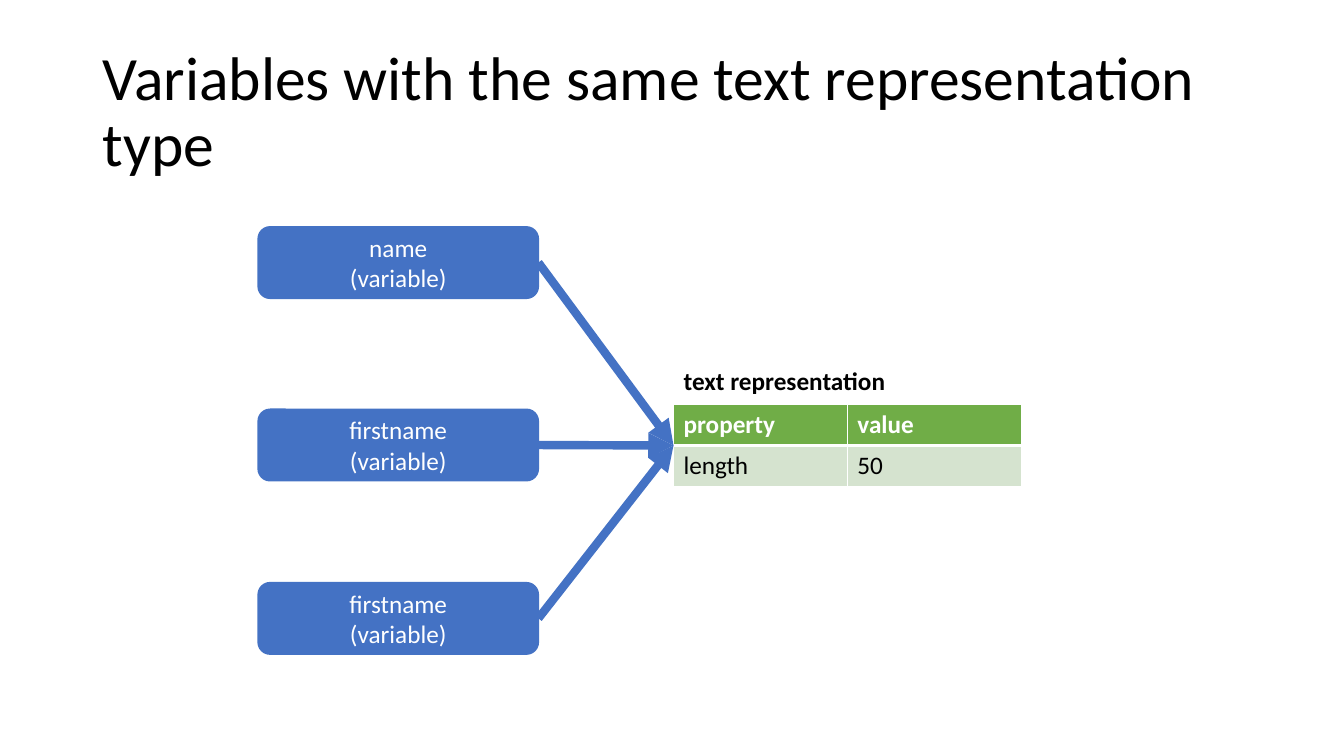
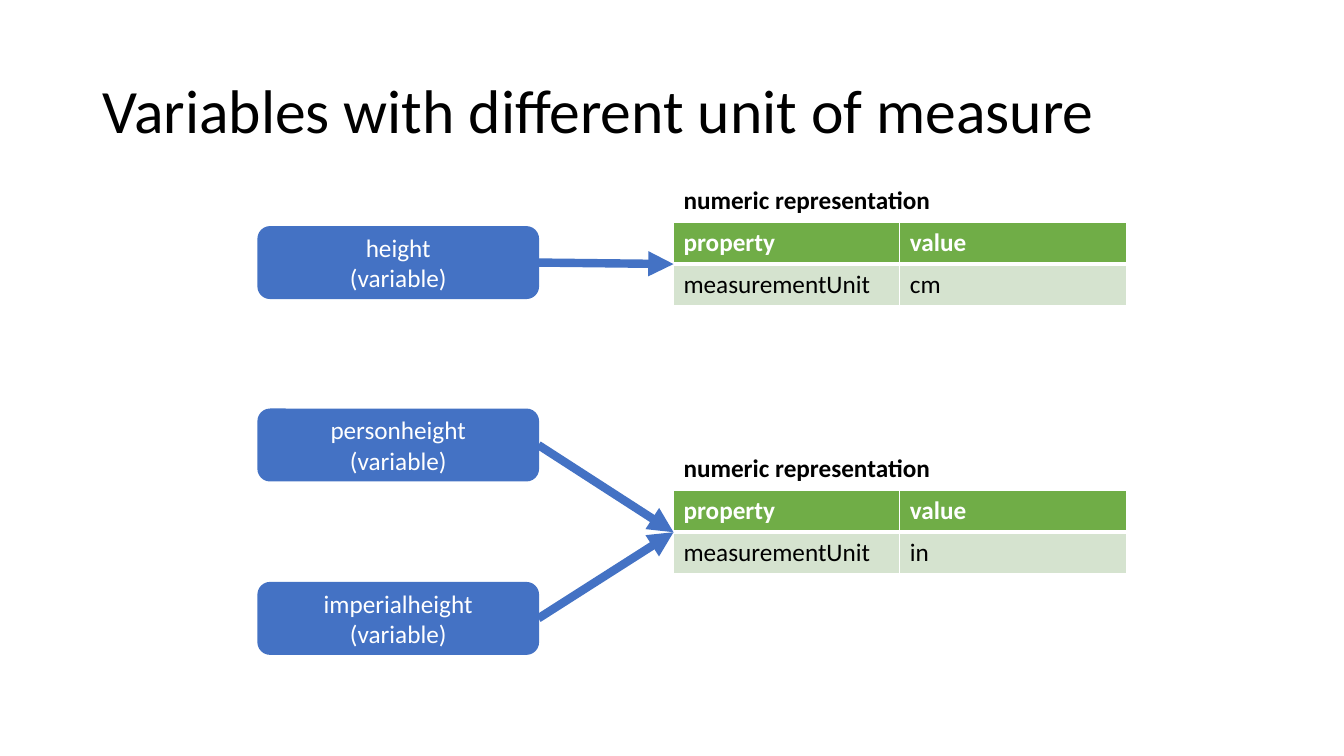
from lxml.etree import SubElement as Sub
from pptx import Presentation
from pptx.dml.color import RGBColor
from pptx.enum.shapes import MSO_CONNECTOR as Link, MSO_SHAPE as Shape
from pptx.enum.text import MSO_ANCHOR as Anchor, PP_ALIGN as Align
from pptx.oxml.ns import qn
from pptx.util import Inches, Pt

FONT = "Calibri"
BLACK, WHITE = "000000", "FFFFFF"
BLUE, GREEN, PALE = "4472C4", "70AD47", "D5E3CF"
BOX_LEFT, BOX_WIDTH, BOX_HEIGHT = 2.56, 2.78, 0.71
BOX_TOPS = 2.25, 4.06, 5.78
GRID_LEFT, ROW = 6.68, 0.41
CAPTION_WIDTH, CAPTION_RISE = 2.88, 0.42

SLIDES = [
    {
        "title": "Variables with the same text representation type",
        "grids": [("text representation", 4.01, 3.45, "length", "50")],
        "boxes": [("name", 0), ("firstname", 0), ("firstname", 0)],
    },
    {
        "title": "Variables with different unit of measure",
        "grids": [
            ("numeric representation", 2.21, 4.49, "measurementUnit", "cm"),
            ("numeric representation", 4.87, 4.49, "measurementUnit", "in"),
        ],
        "boxes": [("height", 0), ("personheight", 1), ("imperialheight", 1)],
    },
]


def paint(target, color):
    """Give a fill or line a solid colour."""
    target.fill.solid()
    target.fill.fore_color.rgb = RGBColor.from_string(color)


def write(frame, text, color, size=18, bold=False):
    """Write one styled paragraph and return it."""
    para = frame.paragraphs[0]
    para.text = text
    font = para.font
    font.name, font.size, font.bold = FONT, Pt(size), bold
    paint(font, color)
    return para


def add_title(slide, text):
    """Place the slide title."""
    box = slide.shapes.add_textbox(Inches(0.92), Inches(0.4), Inches(12.2), Inches(1.45))
    frame = box.text_frame
    frame.word_wrap = True
    frame.vertical_anchor = Anchor.MIDDLE
    write(frame, text, BLACK, 44).line_spacing = 0.9


def add_box(slide, name, top):
    """Place a rounded box for one variable."""
    box = slide.shapes.add_shape(
        Shape.ROUNDED_RECTANGLE,
        Inches(BOX_LEFT), Inches(top), Inches(BOX_WIDTH), Inches(BOX_HEIGHT))
    box.shadow.inherit = False
    paint(box, BLUE)
    paint(box.line, BLUE)
    box.line.width = Pt(1)
    frame = box.text_frame
    frame.word_wrap = True
    frame.vertical_anchor = Anchor.MIDDLE
    write(frame, f"{name}\v(variable)", WHITE).alignment = Align.CENTER
    return box


def edge(cell, top, bottom):
    """Draw white borders of the given top and bottom widths."""
    props = cell._tc.get_or_add_tcPr()
    for side, width in (("L", 1), ("R", 1), ("T", top), ("B", bottom)):
        line = Sub(props, qn(f"a:ln{side}"), w=str(Pt(width)))
        fill = Sub(line, qn("a:solidFill"))
        Sub(fill, qn("a:srgbClr"), val=WHITE)


def add_table(slide, top, width, rows):
    """Place a table of rows, each with texts, fill, colour, weight and borders."""
    count = len(rows[0][0])
    frame = slide.shapes.add_table(
        len(rows), count,
        Inches(GRID_LEFT), Inches(top), Inches(width), Inches(ROW * len(rows)))
    for i, (texts, fill, color, bold, edges) in enumerate(rows):
        for j, text in enumerate(texts):
            cell = frame.table.cell(i, j)
            edge(cell, *edges)
            if fill:
                paint(cell, fill)
            else:
                cell.fill.background()
            write(cell.text_frame, text, color, bold=bold)
    return frame


def add_grid(slide, caption, top, width, key, value):
    """Place a captioned property table and return the table."""
    add_table(slide, top - CAPTION_RISE, CAPTION_WIDTH,
              [([caption], None, BLACK, True, (1, 3))])
    return add_table(slide, top, width, [
        (["property", "value"], GREEN, WHITE, True, (1, 3)),
        ([key, value], PALE, BLACK, False, (3, 1)),
    ])


def add_arrow(slide, box, grid):
    """Join a box to the left side of a table."""
    arrow = slide.shapes.add_connector(Link.STRAIGHT, 0, 0, 0, 0)
    arrow.begin_connect(box, 3)
    arrow.end_connect(grid, 1)
    paint(arrow.line, BLUE)
    arrow.line.width = Pt(6)
    Sub(arrow.line._get_or_add_ln(), qn("a:tailEnd"), type="triangle")
    Sub(arrow._element.spPr, qn("a:effectLst"))


def add_slide(deck, title, grids, boxes):
    """Build a slide that maps variables to representations."""
    slide = deck.slides.add_slide(deck.slide_layouts[6])
    add_title(slide, title)
    frames = [add_grid(slide, *grid) for grid in grids]
    for (name, index), top in zip(boxes, BOX_TOPS):
        add_arrow(slide, add_box(slide, name, top), frames[index])


def main():
    """Build and save the deck."""
    deck = Presentation()
    deck.slide_width, deck.slide_height = Inches(13.33), Inches(7.5)
    for content in SLIDES:
        add_slide(deck, **content)
    deck.save("out.pptx")


if __name__ == "__main__":
    main()
